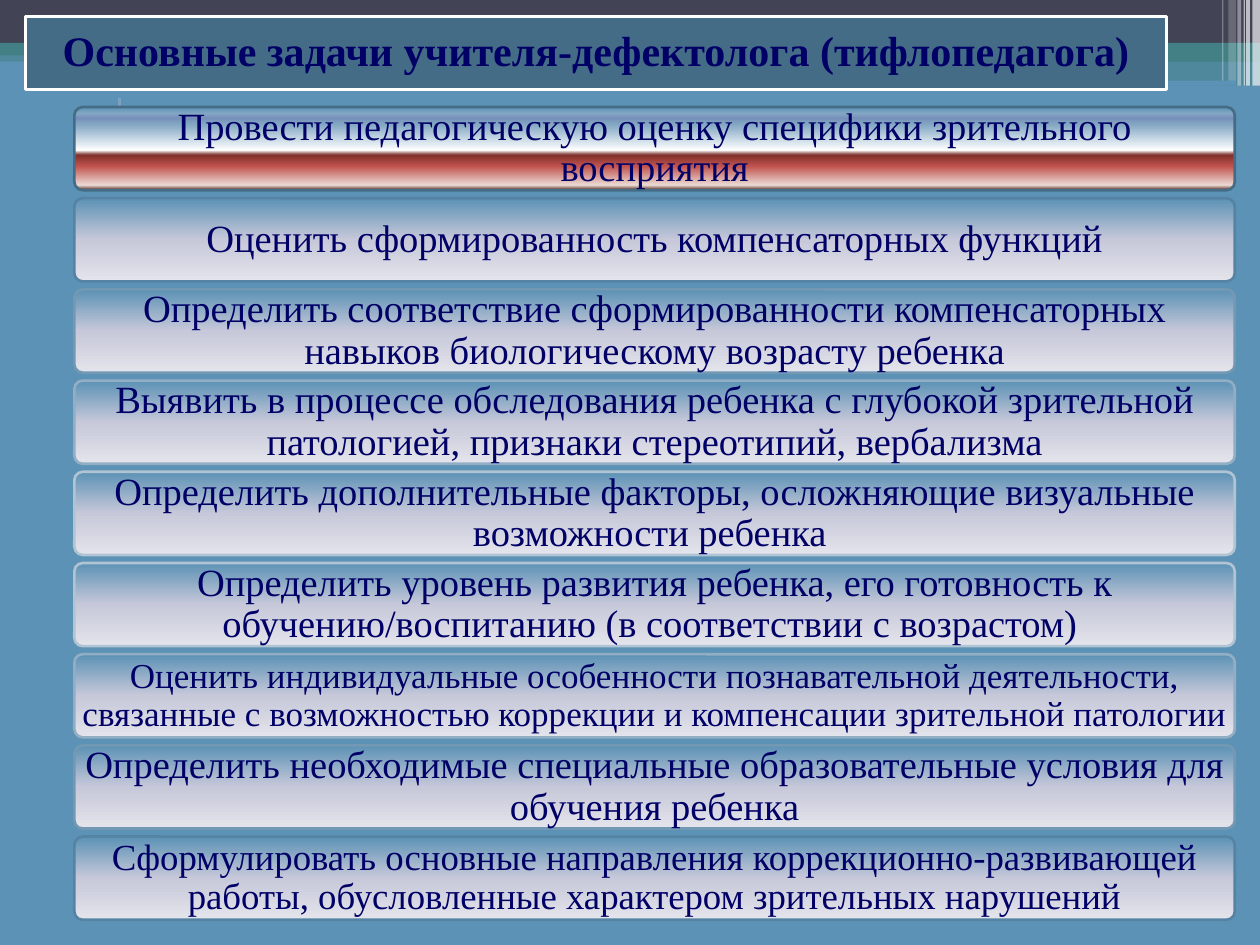
"""Build the slide that lists the main tasks of a special education teacher."""
from lxml.etree import SubElement
from pptx import Presentation
from pptx.dml.color import RGBColor
from pptx.enum.shapes import MSO_SHAPE as Shape
from pptx.enum.text import MSO_ANCHOR as Anchor, MSO_AUTO_SIZE as AutoSize, PP_ALIGN as Align
from pptx.oxml.ns import qn
from pptx.util import Inches, Pt

FONT = "Times New Roman"
NAVY = RGBColor(0x00, 0x00, 0x66)
WHITE = RGBColor(0xFF, 0xFF, 0xFF)
SKY = RGBColor(0x5C, 0x92, 0xB5)
STEEL = RGBColor(0x44, 0x6C, 0x86)
SLATE = RGBColor(0x42, 0x44, 0x56)
TEAL = RGBColor(0x43, 0x80, 0x86)
BRACKET = RGBColor(0x7B, 0xA1, 0xBE)
EDGE_1 = RGBColor(0x55, 0x83, 0xA3)
EDGE_2 = RGBColor(0x73, 0x98, 0xB4)
EDGE_3 = RGBColor(0x92, 0xAE, 0xC4)
EDGE_4 = RGBColor(0xB1, 0xC4, 0xD3)

TITLE = "Основные задачи учителя-дефектолога (тифлопедагога)"
TASKS = [
    ("Провести педагогическую оценку специфики зрительного восприятия", 22, STEEL),
    ("Оценить сформированность компенсаторных функций", 22, EDGE_1),
    ("Определить соответствие сформированности компенсаторных навыков "
     "биологическому возрасту ребенка", 22, EDGE_2),
    ("Выявить в процессе обследования ребенка с глубокой зрительной патологией, "
     "признаки стереотипий, вербализма", 22, EDGE_3),
    ("Определить дополнительные факторы, осложняющие визуальные возможности ребенка ", 22, EDGE_4),
    ("Определить уровень развития ребенка, его готовность к обучению/воспитанию "
     "(в соответствии с возрастом) ", 22, EDGE_4),
    ("Оценить индивидуальные особенности познавательной деятельности, связанные с "
     "возможностью коррекции и компенсации зрительной патологии", 20, EDGE_3),
    ("Определить необходимые специальные образовательные условия для обучения ребенка", 22, EDGE_2),
    ("Сформулировать основные направления коррекционно-развивающей работы, "
     "обусловленные характером зрительных нарушений", 21, EDGE_1),
]
FIRST_STOPS = [(0, "5C92B5"), (8, "83A7C3"), (13, "768FB9"), (21, "83A7C3"), (52, "FFFFFF"),
               (56, "9C6563"), (58, "80302D"), (71, "C0524E"), (94, "EBDAD4"), (100, "55261C")]
TASK_STOPS = [(0, "5C92B5"), (50, "C7C8D9"), (100, "E4E4EC")]

BANDS = [
    (Shape.RECTANGLE, (0, 0.4, 10, 0.09), TEAL, 50),
    (Shape.RECTANGLE, (0, 0, 10, 0.34), SLATE, 100),
    (Shape.RECTANGLE, (0, 0.34, 10, 0.1), TEAL, 100),
    (Shape.RECTANGLE, (5.92, 0.39, 4.08, 0.1), TEAL, 100),
    (Shape.RECTANGLE, (5.92, 0.48, 4.08, 0.2), TEAL, 50),
    (Shape.ROUNDED_RECTANGLE, (5.91, 0.54, 3.35, 0.03), SKY, 100),
    (Shape.ROUNDED_RECTANGLE, (8.06, 0.64, 1.75, 0.04), SKY, 100),
]
STRIPES = [(9.94, 0.06, 0.68, 65), (9.89, 0.03, 0.68, 65), (9.87, 0.01, 0.68, 60),
           (9.82, 0.03, 0.68, 40), (9.75, 0.06, 0.64, 20), (9.7, 0.01, 0.64, 30)]
BRACKET_POINTS = [(0.95, 0.78), (0.95, 1.18), (1.71, 1.18)]

TITLE_BOX = (0.2, 0.13, 9.06, 0.58)
ROW_LEFT, ROW_WIDTH, ROW_HEIGHT = 0.59, 9.21, 0.66
FIRST_TOP, LAST_TOP = 0.85, 6.64


def add_band(page, kind, place, color, opacity):
    band = page.shapes.add_shape(kind, *map(Inches, place))
    band.shadow.inherit = False
    band.line.fill.background()
    band.fill.solid()
    band.fill.fore_color.rgb = color
    if opacity < 100:
        tint = next(band._element.spPr.iter(qn("a:srgbClr")))
        SubElement(tint, qn("a:alpha"), val=str(opacity * 1000))


def set_line(shape, color):
    shape.line.color.rgb = color
    shape.line.width = Pt(1.5)


def set_gradient(shape, stops):
    shape.fill.gradient()
    shape.fill.gradient_angle = 270
    stop_list = next(shape._element.spPr.iter(qn("a:gsLst")))
    for stop in list(stop_list):
        stop_list.remove(stop)
    for position, color in stops:
        stop = SubElement(stop_list, qn("a:gs"), pos=str(position * 1000))
        SubElement(stop, qn("a:srgbClr"), val=color)


def write_text(shape, text, size, inset, bold=False):
    frame = shape.text_frame
    frame.word_wrap = True
    frame.auto_size = AutoSize.NONE
    frame.vertical_anchor = Anchor.MIDDLE
    frame.margin_left = frame.margin_right = Inches(inset)
    frame.margin_top = frame.margin_bottom = Inches(0.04)
    para = frame.paragraphs[0]
    para.alignment = Align.CENTER
    para.line_spacing = 0.9
    span = para.add_run()
    span.text = text
    span.font.name = FONT
    span.font.size = Pt(size)
    span.font.bold = bold
    span.font.color.rgb = NAVY


def add_title(page):
    title = page.shapes.title
    title.left, title.top, title.width, title.height = map(Inches, TITLE_BOX)
    outline = SubElement(title._element.spPr, qn("a:prstGeom"), prst="roundRect")
    guides = SubElement(outline, qn("a:avLst"))
    SubElement(guides, qn("a:gd"), name="adj", fmla="val 10000")
    title.fill.solid()
    title.fill.fore_color.rgb = STEEL
    set_line(title, WHITE)
    write_text(title, TITLE, 24, 0.04, bold=True)
    page.shapes._spTree.append(title._element)


def add_bracket(page):
    start, *others = [(Inches(x), Inches(y)) for x, y in BRACKET_POINTS]
    builder = page.shapes.build_freeform(*start)
    builder.add_line_segments(others, close=False)
    bracket = builder.convert_to_shape()
    bracket.shadow.inherit = False
    bracket.fill.background()
    set_line(bracket, BRACKET)


def add_tasks(page):
    step = (LAST_TOP - FIRST_TOP) / (len(TASKS) - 1)
    for index, (text, size, edge) in enumerate(TASKS):
        place = (ROW_LEFT, FIRST_TOP + index * step, ROW_WIDTH, ROW_HEIGHT)
        box = page.shapes.add_shape(Shape.ROUNDED_RECTANGLE, *map(Inches, place))
        box.adjustments[0] = 0.1
        box.shadow.inherit = False
        set_gradient(box, TASK_STOPS if index else FIRST_STOPS)
        set_line(box, edge)
        write_text(box, text, size, 0.03)


def main():
    deck = Presentation()
    deck.slide_width, deck.slide_height = Inches(10), Inches(7.5)
    page = deck.slides.add_slide(deck.slide_layouts[5])
    page.background.fill.solid()
    page.background.fill.fore_color.rgb = SKY
    for band in BANDS:
        add_band(page, *band)
    for left, width, height, opacity in STRIPES:
        add_band(page, Shape.RECTANGLE, (left, 0, width, height), WHITE, opacity)
    add_title(page)
    add_bracket(page)
    add_tasks(page)
    deck.save("out.pptx")


if __name__ == "__main__":
    main()
